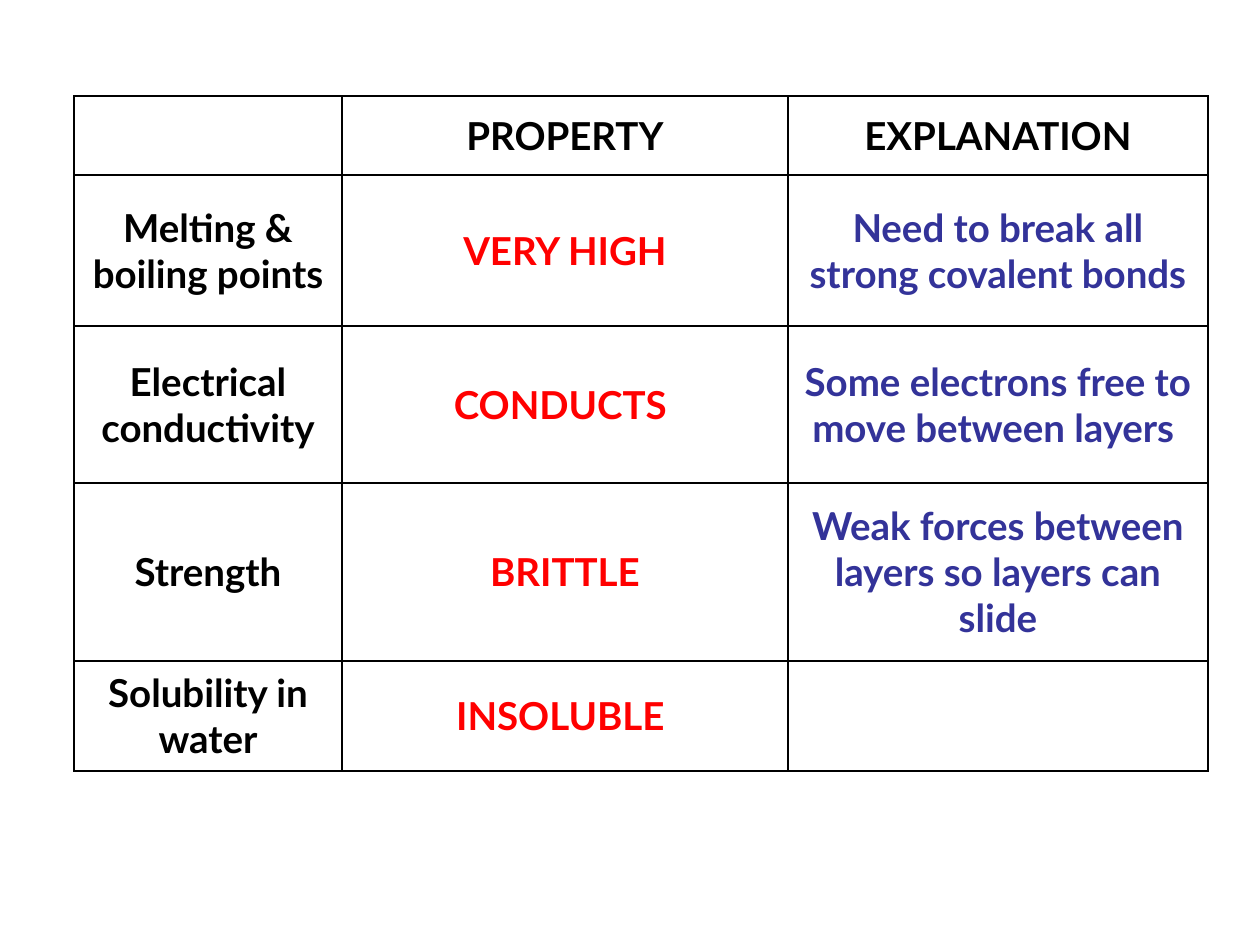
from dataclasses import dataclass

from lxml import etree
from pptx import Presentation
from pptx.dml.color import RGBColor
from pptx.enum.text import MSO_ANCHOR, PP_ALIGN
from pptx.oxml.ns import qn
from pptx.util import Emu, Pt

MIDDLE = MSO_ANCHOR.MIDDLE
CENTER = PP_ALIGN.CENTER

PX_PER_INCH = 126
EMU_PER_INCH = 914400
FONT_NAME = "Lato"
FONT_SIZE = Pt(22)
BORDER_WIDTH = Pt(1)

BLACK = RGBColor(0x00, 0x00, 0x00)
WHITE = RGBColor(0xFF, 0xFF, 0xFF)
RED = RGBColor(0xFF, 0x00, 0x00)
INDIGO = RGBColor(0x33, 0x33, 0x99)

TABLE_LEFT, TABLE_TOP = 74, 96
COLUMN_WIDTHS = (268, 446, 420)
COLUMN_COLORS = (BLACK, RED, INDIGO)


@dataclass(frozen=True)
class TableRow:
    height: int
    texts: tuple[str, str, str]


ROWS = (
    TableRow(79, ("", "PROPERTY", "EXPLANATION")),
    TableRow(151, ("Melting & boiling points", "VERY HIGH",
                   "Need to break all strong covalent bonds")),
    TableRow(157, ("Electrical conductivity", "CONDUCTS ",
                   "Some electrons free to move between layers ")),
    TableRow(178, ("Strength", "BRITTLE",
                   "Weak forces between layers so layers can slide")),
    TableRow(110, ("Solubility in water", "INSOLUBLE ", "")),
)


def px(length: int) -> Emu:
    return Emu(round(length * EMU_PER_INCH / PX_PER_INCH))


def add_borders(cell) -> None:
    properties = cell._tc.get_or_add_tcPr()
    for side in ("a:lnL", "a:lnR", "a:lnT", "a:lnB"):
        line = etree.SubElement(properties, qn(side), w=str(BORDER_WIDTH))
        fill = etree.SubElement(line, qn("a:solidFill"))
        etree.SubElement(fill, qn("a:srgbClr"), val=str(BLACK))


def fill_cell(cell, text: str, color: RGBColor) -> None:
    add_borders(cell)
    cell.fill.solid()
    cell.fill.fore_color.rgb = WHITE
    cell.vertical_anchor = MIDDLE
    cell.text_frame.text = text
    para = cell.text_frame.paragraphs[0]
    para.alignment = CENTER
    for span in para.runs:
        span.font.name = FONT_NAME
        span.font.size = FONT_SIZE
        span.font.bold = True
        span.font.color.rgb = color


def add_property_table(page) -> None:
    width = sum(COLUMN_WIDTHS)
    height = sum(row.height for row in ROWS)
    table = page.shapes.add_table(
        len(ROWS), len(COLUMN_WIDTHS),
        px(TABLE_LEFT), px(TABLE_TOP), px(width), px(height),
    ).table
    table.first_row = False
    table.horz_banding = False

    for column, column_width in zip(table.columns, COLUMN_WIDTHS):
        column.width = px(column_width)

    # The header row is black; below it each column has its own colour
    for row_index, row in enumerate(ROWS):
        table.rows[row_index].height = px(row.height)
        for column_index, text in enumerate(row.texts):
            color = COLUMN_COLORS[column_index] if row_index else BLACK
            fill_cell(table.cell(row_index, column_index), text, color)


def main() -> None:
    deck = Presentation()
    deck.slide_width, deck.slide_height = px(1260), px(945)
    page = deck.slides.add_slide(deck.slide_layouts[6])
    add_property_table(page)
    deck.save("out.pptx")


if __name__ == "__main__":
    main()
